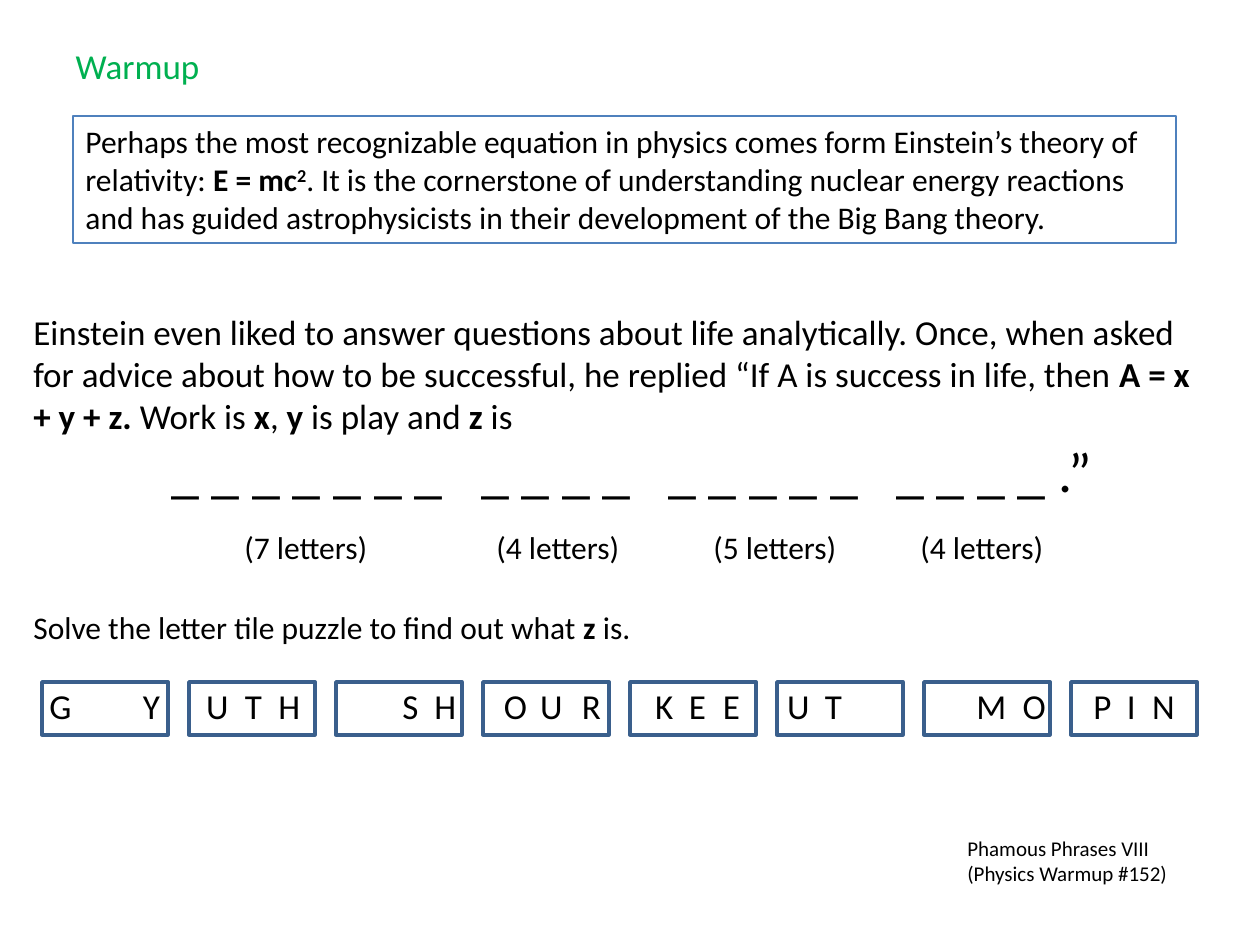
import pptx
import pptx.util
import pptx.dml.color
import pptx.enum.shapes
import pptx.enum.text
import pptx.oxml
import pptx.oxml.ns

TILE_LEFT, TILE_STEP, TILE_COUNT = 42, 147, 8
TEXT_LEFT = 33
BLANKS = [(7, 171), (4, 481), (5, 668), (4, 896)]
COUNT_STOPS = [244, 496, 713, 920]
TILE_LETTERS = [
    ("G", 60), ("Y", 151), ("U", 217), ("T", 253), ("H", 289), ("S", 410),
    ("H", 445), ("O", 515), ("U", 551), ("R", 591), ("K", 664), ("E", 697),
    ("E", 731), ("U", 798), ("T", 833), ("M", 991), ("O", 1034), ("P", 1102),
    ("I", 1131), ("N", 1163),
]


def px(length):
    return pptx.util.Emu(round(length * 914400 / 126))


def color(value):
    return pptx.dml.color.RGBColor.from_string(value)


class SlideBuilder:
    """Holds the text style and the current slide, and adds elements to it."""

    font = "Calibri"
    ink = "000000"

    def __init__(self, page):
        self.page = page

    def paragraph(self, frame, spans, size, ink=None, before=0, first=False):
        para = frame.paragraphs[0] if first else frame.add_paragraph()
        para.alignment = pptx.enum.text.PP_ALIGN.LEFT
        para.space_before = pptx.util.Pt(before)
        para.font.name = self.font
        para.font.size = pptx.util.Pt(size)
        para.font.color.rgb = color(ink or self.ink)
        for text, style in spans:
            span = para.add_run()
            span.text = text
            if style:
                span.font.bold = True
            if style == "super":
                span.font._element.set("baseline", "30000")
        return para

    def tabbed(self, frame, entries, size, align="l", before=0):
        text = "".join("\t" + entry for entry, _ in entries)
        para = self.paragraph(frame, [(text, "")], size, before=before)
        properties = para._p.get_or_add_pPr()
        stops = pptx.oxml.parse_xml(
            "<a:tabLst %s/>" % pptx.oxml.ns.nsdecls("a"))
        for _, stop in entries:
            tab = stops.makeelement(pptx.oxml.ns.qn("a:tab"), {})
            tab.set("pos", str(px(stop - TEXT_LEFT)))
            tab.set("algn", align)
            stops.append(tab)
        properties.find(pptx.oxml.ns.qn("a:defRPr")).addprevious(stops)

    def title(self, text, box, size, ink):
        title = self.page.shapes.title
        title.left, title.top, title.width, title.height = map(px, box)
        frame = title.text_frame
        frame.auto_size = pptx.enum.text.MSO_AUTO_SIZE.NONE
        frame.vertical_anchor = pptx.enum.text.MSO_ANCHOR.TOP
        self.paragraph(frame, [(text, "")], size, ink, first=True)

    def text_box(self, box):
        frame = self.page.shapes.add_textbox(*map(px, box)).text_frame
        frame.word_wrap = True
        frame.auto_size = pptx.enum.text.MSO_AUTO_SIZE.SHAPE_TO_FIT_TEXT
        return frame

    def outline(self, box, line, width, shapes=None):
        shape = (shapes or self.page.shapes).add_shape(
            pptx.enum.shapes.MSO_SHAPE.RECTANGLE, *map(px, box))
        shape.shadow.inherit = False
        shape.fill.background()
        shape.line.color.rgb = color(line)
        shape.line.width = pptx.util.Pt(width)
        return shape

    def outlined_text(self, spans, box, size, line, width):
        frame = self.outline(box, line, width).text_frame
        frame.word_wrap = True
        frame.auto_size = pptx.enum.text.MSO_AUTO_SIZE.SHAPE_TO_FIT_TEXT
        frame.vertical_anchor = pptx.enum.text.MSO_ANCHOR.TOP
        self.paragraph(frame, spans, size, first=True)

    def tiles(self):
        group = self.page.shapes.add_group_shape()
        for index in range(TILE_COUNT):
            left = TILE_LEFT + index * TILE_STEP
            self.outline((left, 682, 126, 53), "3A5F8C", 2, group.shapes)


def main():
    deck = pptx.Presentation()
    deck.slide_width, deck.slide_height = px(1260), px(945)
    slide = SlideBuilder(deck.slides.add_slide(deck.slide_layouts[5]))

    slide.title("Warmup", (63, 38, 1134, 67), 20, "00B050")
    slide.outlined_text([
        ("Perhaps the most recognizable equation in physics comes form "
         "Einstein’s theory of relativity: ", ""),
        ("E = mc", "bold"),
        ("2", "super"),
        (". It is the cornerstone of understanding nuclear energy reactions "
         "and has guided astrophysicists in their development of the "
         "Big Bang theory.", ""),
    ], (73, 116, 1103, 127), 18, "4F81BD", 0.75)

    source = slide.text_box((955, 829, 262, 63))
    slide.paragraph(source, [("Phamous Phrases VIII (Physics Warmup #152)", "")],
                    12, first=True)

    puzzle = slide.text_box((21, 304, 1187, 432))
    slide.paragraph(puzzle, [
        ("Einstein even liked to answer questions about life analytically. "
         "Once, when asked for advice about how to be successful, he replied "
         "“If A is success in life, then ", ""),
        ("A = x + y + z. ", "bold"), ("Work is ", ""), ("x", "bold"),
        (", ", ""), ("y", "bold"), (" is play and ", ""), ("z", "bold"),
        (" is", ""),
    ], 20, first=True)
    words = [(" ".join("_" * count), stop) for count, stop in BLANKS]
    words[-1] = (words[-1][0] + " .”", words[-1][1])
    slide.tabbed(puzzle, words, 32)
    counts = [(f"({count} letters)", stop)
              for (count, _), stop in zip(BLANKS, COUNT_STOPS)]
    slide.tabbed(puzzle, counts, 18, before=14)
    slide.paragraph(puzzle, [
        ("Solve the letter tile puzzle to find out what ", ""),
        ("z", "bold"), (" is.", ""),
    ], 18, before=24)
    slide.tabbed(puzzle, TILE_LETTERS, 20, align="ctr", before=22)
    slide.tiles()

    deck.save("out.pptx")


if __name__ == "__main__":
    main()
